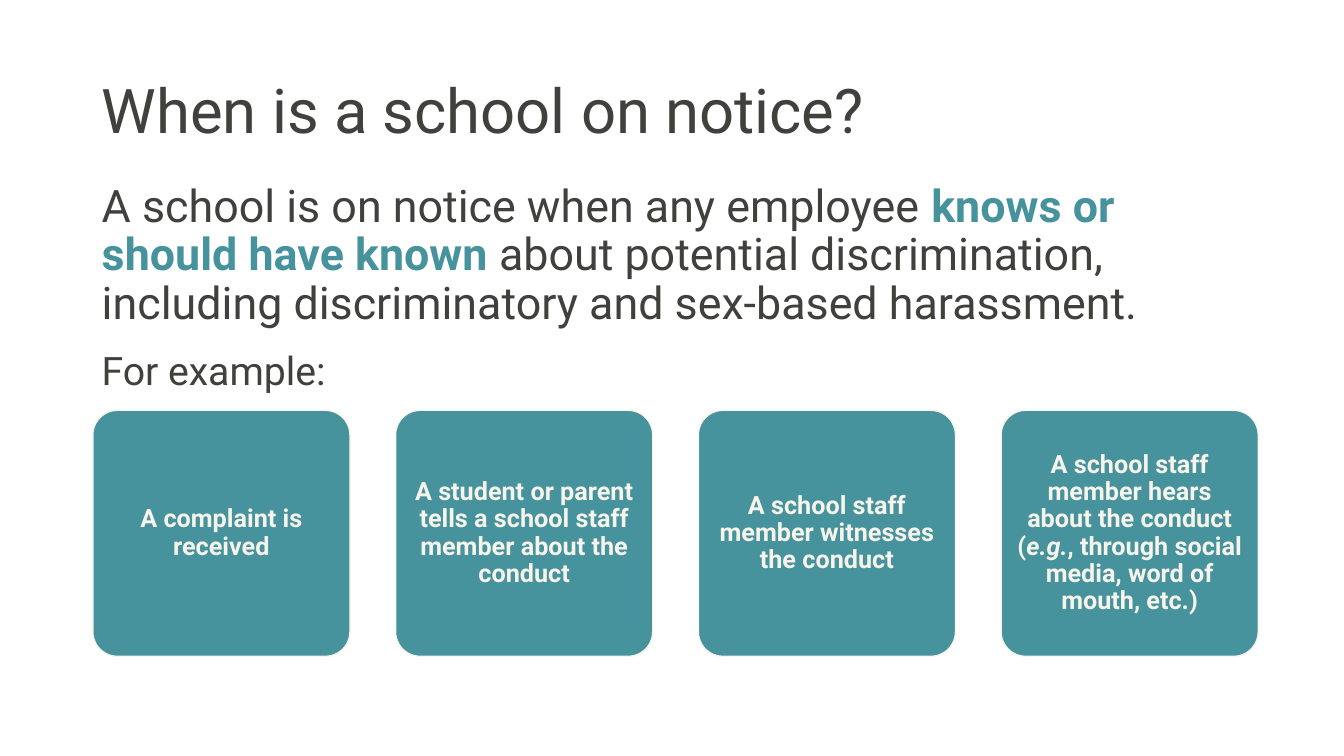
"""Build the slide on when a school is on notice."""
from dataclasses import dataclass
from typing import Optional

from pptx import Presentation
from pptx import util as u
from pptx.dml import color
from pptx.enum import shapes, text


@dataclass(frozen=True)
class Theme:
    font: str = "Roboto"
    ink: str = "40403D"
    teal: str = "46929D"
    cream: str = "F7F5EB"
    title: int = 44
    body: int = 32
    lead_in: int = 28
    card: int = 18


@dataclass(frozen=True)
class Run:
    text: str
    color: str
    bold: bool = False
    italic: bool = False


@dataclass(frozen=True)
class Box:
    left: float
    top: float
    width: float
    height: float

    def lengths(self) -> tuple:
        return tuple(u.Cm(v) for v in (self.left, self.top, self.width, self.height))


THEME = Theme()
CARD = Box(2.34, 10.34, 6.48, 6.2)
CARD_PITCH = 7.63


def card_run(words: str, italic: bool = False) -> Run:
    return Run(words, THEME.cream, True, italic)


CARDS = [
    [card_run("A complaint is received")],
    [card_run("A student or parent tells a school staff member about the conduct")],
    [card_run("A school staff member witnesses the conduct")],
    [
        card_run("A school staff member hears about the conduct ("),
        card_run("e.g.", True),
        card_run(", through social media, word of mouth, etc.)"),
    ],
]


def write(tf, runs: list[Run], size: int, align=text.PP_ALIGN.LEFT,
          anchor=text.MSO_ANCHOR.TOP, spacing: Optional[float] = 0.9) -> None:
    tf.word_wrap = True
    tf.auto_size = text.MSO_AUTO_SIZE.NONE
    tf.vertical_anchor = anchor
    p = tf.paragraphs[0]
    p.alignment = align
    p.line_spacing = spacing
    p.space_before = u.Pt(0)
    for run in runs:
        r = p.add_run()
        r.text = run.text
        r.font.name = THEME.font
        r.font.size = u.Pt(size)
        r.font.bold = run.bold
        r.font.italic = run.italic
        r.font.color.rgb = color.RGBColor.from_string(run.color)


def place(sp, box: Box) -> None:
    sp.left, sp.top, sp.width, sp.height = box.lengths()


def remove_bullet(p) -> None:
    pPr = p._p.get_or_add_pPr()
    pPr.set("marL", "0")
    pPr.set("indent", "0")
    pPr.append(pPr.makeelement(
        "{http://schemas.openxmlformats.org/drawingml/2006/main}buNone", {}))


def add_card(s, box: Box, runs: list[Run]) -> None:
    sp = s.shapes.add_shape(shapes.MSO_SHAPE.ROUNDED_RECTANGLE, *box.lengths())
    sp.adjustments[0] = 0.1
    sp.shadow.inherit = False
    sp.fill.solid()
    sp.fill.fore_color.rgb = color.RGBColor.from_string(THEME.teal)
    sp.line.color.rgb = color.RGBColor.from_string(THEME.cream)
    sp.line.width = u.Pt(1)
    tf = sp.text_frame
    tf.margin_left = tf.margin_right = tf.margin_top = tf.margin_bottom = u.Cm(0.18)
    write(tf, runs, THEME.card, text.PP_ALIGN.CENTER, text.MSO_ANCHOR.MIDDLE)


def main() -> None:
    prs = Presentation()
    prs.slide_width, prs.slide_height = u.Cm(33.87), u.Cm(19.05)
    s = prs.slides.add_slide(prs.slide_layouts[1])

    title, body = s.shapes.title, s.placeholders[1]
    place(title, Box(2.31, 1.57, 20.35, 2.57))
    write(title.text_frame, [Run("When is a school on notice?", THEME.ink)],
          THEME.title, anchor=text.MSO_ANCHOR.MIDDLE)

    place(body, Box(2.31, 4.5, 29.21, 4.34))
    remove_bullet(body.text_frame.paragraphs[0])
    write(body.text_frame, [
        Run("A school is on notice when any employee ", THEME.ink),
        Run("knows or should have known", THEME.teal, True),
        Run(" about potential discrimination, including discriminatory"
            " and sex-based harassment.", THEME.ink),
    ], THEME.body)

    for i, runs in enumerate(CARDS):
        add_card(s, Box(CARD.left + i * CARD_PITCH, CARD.top, CARD.width, CARD.height), runs)

    lead_in = s.shapes.add_textbox(*Box(2.31, 8.59, 26.04, 1.45).lengths())
    write(lead_in.text_frame, [Run("For example:", THEME.ink)], THEME.lead_in, spacing=None)

    prs.save("out.pptx")


if __name__ == "__main__":
    main()
